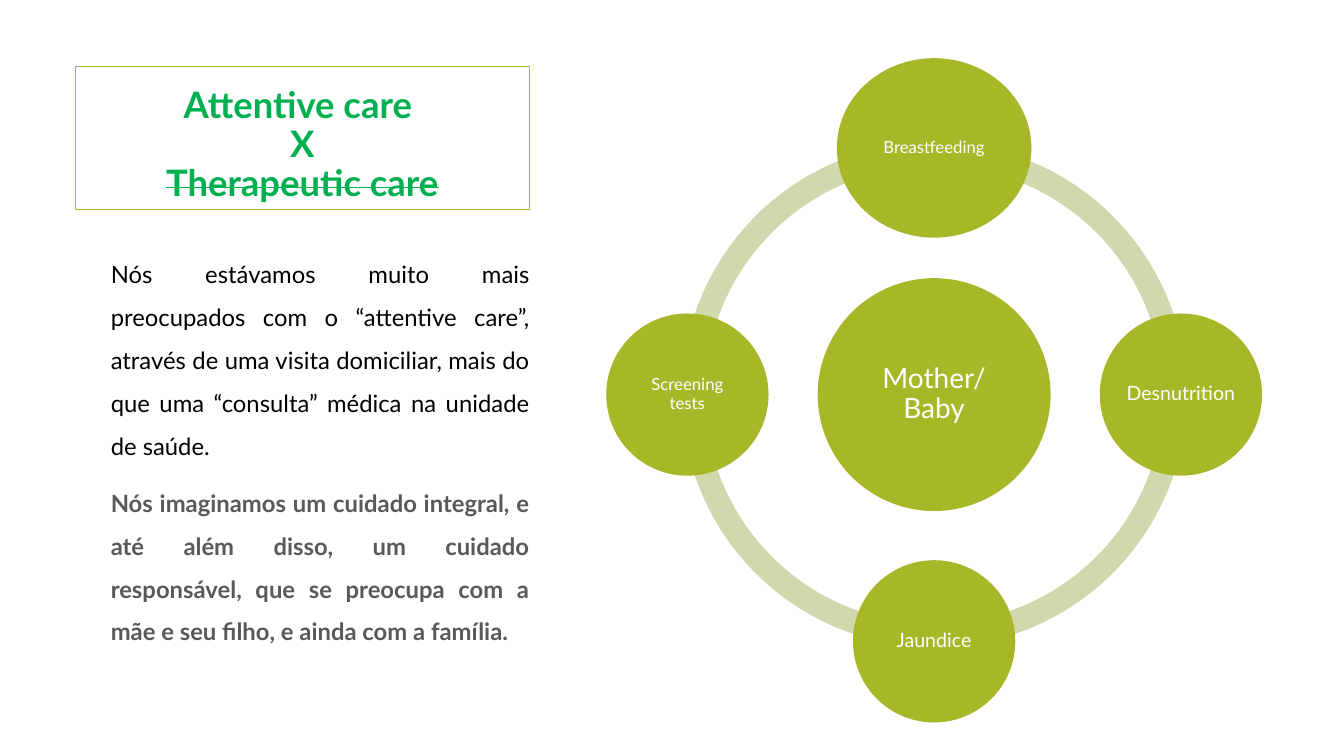
from math import cos, radians, sin

from pptx import Presentation
from pptx.dml.color import RGBColor
from pptx.enum.shapes import MSO_SHAPE as Shape
from pptx.enum.text import MSO_ANCHOR as Anchor, PP_ALIGN as Align
from pptx.util import Inches, Pt

LIME = RGBColor(0xA6, 0xB7, 0x27)
PALE = RGBColor(0xD0, 0xD8, 0xAD)
GREEN = RGBColor(0x00, 0xB0, 0x50)
GREY = RGBColor(0x59, 0x59, 0x59)
BLACK = RGBColor(0, 0, 0)
WHITE = RGBColor(255, 255, 255)

# label, angle in degrees clockwise from the right, width, height, text size
NODES = [
    ("Breastfeeding", 270, 1.93, 1.78, 12),
    ("Desnutrition", 0, 1.61, 1.61, 14),
    ("Jaundice", 90, 1.61, 1.61, 14),
    ("Screening tests", 180, 1.61, 1.61, 12),
]
BODY = [
    ("Nós estávamos muito mais preocupados com o “attentive care”, através de uma "
     "visita domiciliar, mais do que uma “consulta” médica na unidade de saúde.",
     BLACK, False),
    ("Nós imaginamos um cuidado integral, e até além disso, um cuidado responsável, "
     "que se preocupa com a mãe e seu filho, e ainda com a família.",
     GREY, True),
]


def style(font, size, color, bold=False):
    for key, val in {"name": "Lato", "size": Pt(size), "bold": bold}.items():
        setattr(font, key, val)
    font.color.rgb = color


def frame(shape, anchor, inset=None):
    """Set wrapping, anchor and optional equal insets; return the text frame."""
    text = shape.text_frame
    text.word_wrap = True
    text.vertical_anchor = anchor
    if inset is not None:
        for side in ("left", "top", "right", "bottom"):
            setattr(text, f"margin_{side}", Inches(inset))
    return text


def add_round(slide, kind, x, y, wide, high, color):
    """Add a borderless shape centred on (x, y)."""
    shape = slide.shapes.add_shape(
        kind, Inches(x - wide / 2), Inches(y - high / 2), Inches(wide), Inches(high))
    shape.shadow.inherit = False
    shape.fill.solid()
    shape.fill.fore_color.rgb = color
    shape.line.fill.background()
    return shape


def add_node(slide, label, x, y, wide, high, size, inset=0.02):
    node = add_round(slide, Shape.OVAL, x, y, wide, high, LIME)
    para = frame(node, Anchor.MIDDLE, inset).paragraphs[0]
    para.text = label
    para.alignment = Align.CENTER
    para.line_spacing = 0.9
    style(para.font, size, WHITE)


def add_cycle(slide, left, top, side):
    """Draw the ring, its hub and the nodes around it in a square box."""
    x, y = left + side / 2, top + side / 2
    ring = add_round(slide, Shape.DONUT, x, y, side, side, PALE)
    ring.adjustments[0] = 0.046
    add_node(slide, "Mother/Baby", x, y, 2.31, 2.31, 20, 0.03)
    orbit = side / 2 * (1 - 0.046 / 2)
    for label, angle, wide, high, size in NODES:
        turn = radians(angle)
        add_node(slide, label, x + orbit * cos(turn), y + orbit * sin(turn),
                 wide, high, size)


def add_title(slide, *box):
    shape = slide.shapes.add_textbox(*map(Inches, box))
    shape.line.color.rgb = LIME
    shape.line.width = Pt(0.75)
    para = frame(shape, Anchor.BOTTOM).paragraphs[0]
    para.text = "Attentive care \vX\v"
    para.alignment = Align.CENTER
    para.line_spacing = 0.9
    struck = para.add_run()
    struck.text = "Therapeutic care"
    struck._r.get_or_add_rPr().set("strike", "sngStrike")
    for run in para.runs:
        style(run.font, 26, GREEN, True)


def add_body(slide, *box):
    text = frame(slide.shapes.add_textbox(*map(Inches, box)), Anchor.TOP)
    for i, (words, color, bold) in enumerate(BODY):
        para = text.add_paragraph() if i else text.paragraphs[0]
        para.text = words
        para.alignment = Align.JUSTIFY
        para.line_spacing = 1.5
        para.space_before = Pt(10 if i else 0)
        style(para.font, 17, color, bold)


def main():
    deck = Presentation()
    deck.slide_width, deck.slide_height = Inches(13.33), Inches(7.5)
    slide = deck.slides.add_slide(deck.slide_layouts[6])
    add_title(slide, 0.75, 0.66, 4.5, 1.42)
    add_cycle(slide, 6.76, 1.41, 5.01)
    add_body(slide, 1, 2.39, 4.35, 3.62)
    deck.save("out.pptx")


if __name__ == "__main__":
    main()
